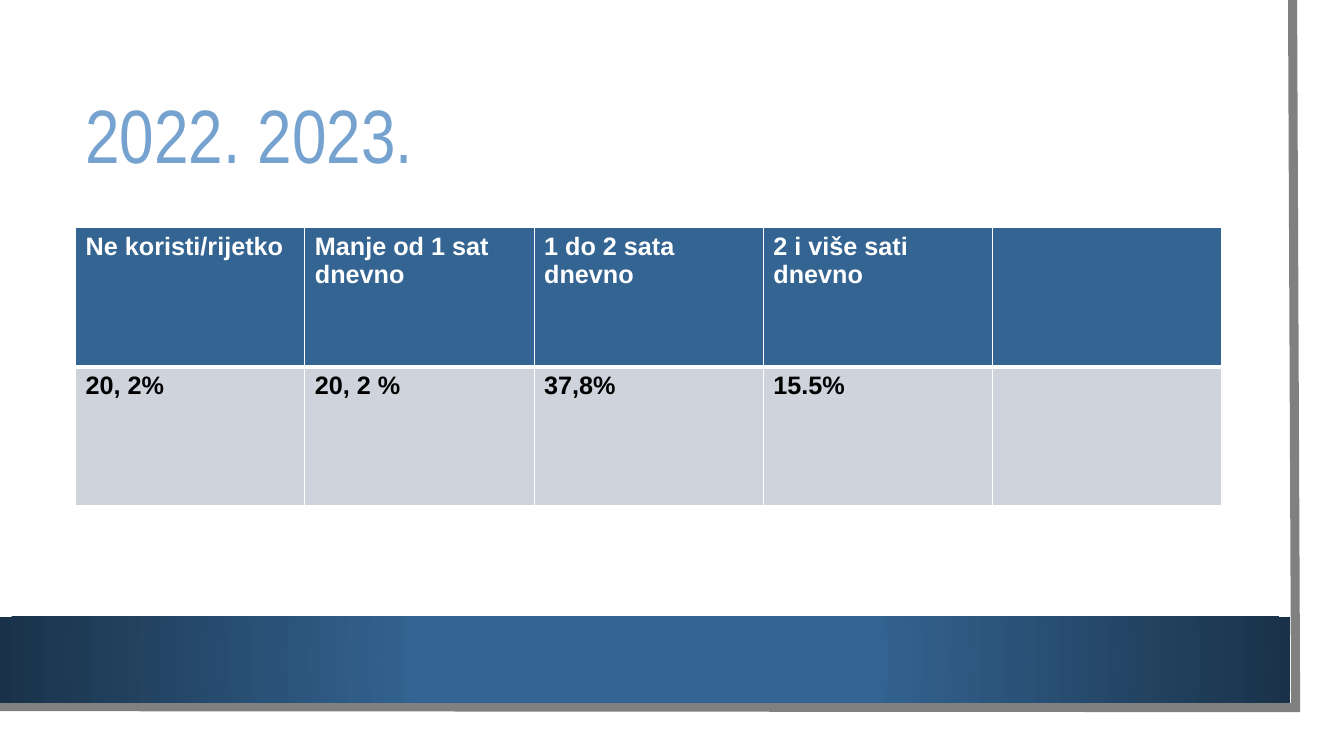
from lxml import etree
from pptx import Presentation
from pptx import util as u
from pptx.dml.color import RGBColor
from pptx.enum import shapes, text
from pptx.oxml import parse_xml
from pptx.oxml.ns import nsdecls, qn

WHITE = RGBColor(0xFF, 0xFF, 0xFF)
BLACK = RGBColor(0, 0, 0)
GRAY = RGBColor(0x80, 0x80, 0x80)
BLUE = RGBColor(0x34, 0x64, 0x92)
NAVY = RGBColor(0x1A, 0x32, 0x49)
SKY = RGBColor(0x75, 0xA2, 0xCE)
SILVER = RGBColor(0xCE, 0xD3, 0xDC)

USAGE = [
    ["Ne koristi/rijetko", "Manje od 1 sat dnevno", "1 do 2 sata dnevno",
     "2 i više sati dnevno", ""],
    ["20, 2%", "20, 2 %", "37,8%", "15.5%", ""],
]


class UsageSlide:
    title_font = "Arial Narrow"
    body_font = "Arial"

    def __init__(self, prs):
        self.s = prs.slides.add_slide(prs.slide_layouts[6])

    def panel(self, x, y, w, h, color):
        sp = self.s.shapes.add_shape(
            shapes.MSO_SHAPE.RECTANGLE,
            u.Inches(x), u.Inches(y), u.Inches(w), u.Inches(h))
        sp.shadow.inherit = False
        sp.fill.solid()
        sp.fill.fore_color.rgb = color
        sp.line.fill.background()
        return sp

    def radial_band(self, x, y, w, h, inner, outer):
        sp = self.panel(x, y, w, h, inner)
        stops = "".join(
            f'<a:gs pos="{pos * 1000}"><a:srgbClr val="{color}"/></a:gs>'
            for pos, color in ((34, inner), (100, outer)))
        grad = parse_xml(
            f'<a:gradFill {nsdecls("a")} rotWithShape="1"><a:gsLst>{stops}</a:gsLst>'
            '<a:path path="circle"><a:fillToRect l="50000" t="50000" '
            'r="50000" b="50000"/></a:path></a:gradFill>')
        spPr = sp.element.spPr
        spPr.replace(spPr.find(qn("a:solidFill")), grad)

    def page_edge(self, points, color, width):
        points = [(u.Inches(x), u.Inches(y)) for x, y in points]
        builder = self.s.shapes.build_freeform(*points[0])
        builder.add_line_segments(points[1:], close=False)
        sp = builder.convert_to_shape()
        sp.shadow.inherit = False
        sp.fill.background()
        sp.line.color.rgb = color
        sp.line.width = u.Pt(width)
        ln = sp.element.spPr.find(qn("a:ln"))
        etree.SubElement(ln, qn("a:miter"), lim="800000")

    def add_words(self, tf, words, font, size, color, bold=False):
        p = tf.paragraphs[0]
        r = p.add_run()
        r.text = words
        r.font.name = font
        r.font.size = u.Pt(size)
        r.font.bold = bold
        r.font.color.rgb = color
        return p

    def title(self, x, y, w, h, words):
        sp = self.s.shapes.add_textbox(
            u.Inches(x), u.Inches(y), u.Inches(w), u.Inches(h))
        tf = sp.text_frame
        tf.word_wrap = True
        tf.vertical_anchor = text.MSO_ANCHOR.MIDDLE
        p = self.add_words(tf, words, self.title_font, 54, SKY)
        p.line_spacing = 0.9

    def borders(self, cell, top, bottom):
        tcPr = cell._tc.get_or_add_tcPr()
        for side, width in (("L", 1), ("R", 1), ("T", top), ("B", bottom)):
            tcPr.append(parse_xml(
                f'<a:ln{side} {nsdecls("a")} w="{u.Pt(width)}"><a:solidFill>'
                f'<a:srgbClr val="{WHITE}"/></a:solidFill></a:ln{side}>'))

    def table(self, x, y, w, h, rows):
        table = self.s.shapes.add_table(
            len(rows), len(rows[0]),
            u.Inches(x), u.Inches(y), u.Inches(w), u.Inches(h)).table
        looks = [(BLUE, WHITE, 1, 3), (SILVER, BLACK, 3, 1)]
        for i, (row, (fill, color, top, bottom)) in enumerate(zip(rows, looks)):
            for j, words in enumerate(row):
                cell = table.cell(i, j)
                self.borders(cell, top, bottom)
                cell.fill.solid()
                cell.fill.fore_color.rgb = fill
                if words:
                    self.add_words(
                        cell.text_frame, words, self.body_font, 18, color, True)


def main():
    prs = Presentation()
    prs.slide_width = u.Inches(13.33)
    prs.slide_height = u.Inches(7.5)
    slide = UsageSlide(prs)
    slide.panel(0, 0, 13.1, 7.27, WHITE)
    slide.page_edge([(12.82, 0), (12.85, 7.02), (-0.03, 7.01)], GRAY, 6.5)
    slide.radial_band(0, 6.12, 12.8, 0.85, BLUE, NAVY)
    slide.title(0.75, 0.75, 11.37, 1.26, "2022. 2023.")
    slide.table(0.75, 2.26, 11.37, 2.76, USAGE)
    prs.save("out.pptx")


if __name__ == "__main__":
    main()
